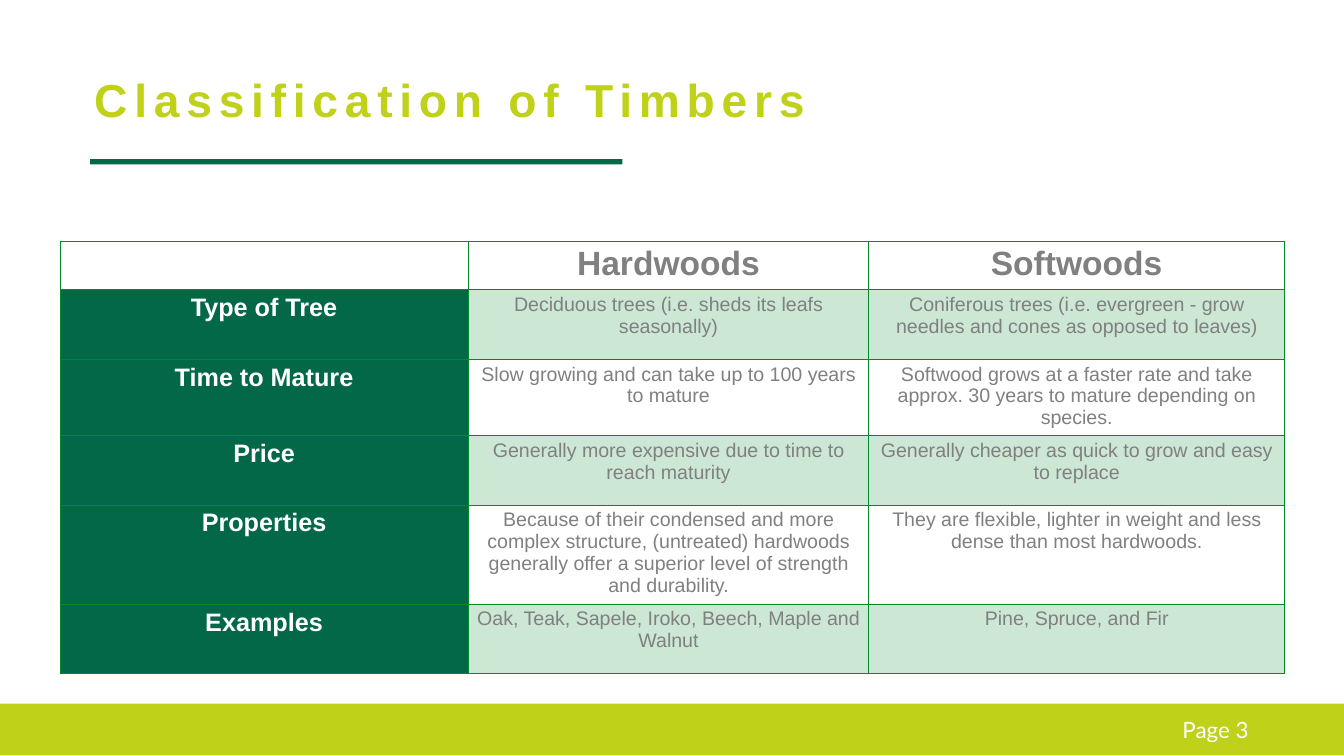
from dataclasses import dataclass

from lxml.etree import SubElement
from pptx import Presentation
from pptx.dml.color import RGBColor as RGB
from pptx.enum.shapes import MSO_SHAPE as Shape
from pptx.enum.text import MSO_ANCHOR as Anchor, PP_ALIGN as Align
from pptx.oxml.ns import qn
from pptx.util import Inches, Pt

TITLE = "Classification of Timbers"
FOOTER = "Page 3"
TIMBERS = [
    ("", "Hardwoods", "Softwoods"),
    ("Type of Tree",
     "Deciduous trees (i.e. sheds its leafs seasonally)",
     "Coniferous trees (i.e. evergreen - grow needles and cones as opposed to leaves)"),
    ("Time to Mature",
     "Slow growing and can take up to 100 years to mature",
     "Softwood grows at a faster rate and take approx. 30 years to mature depending on species."),
    ("Price",
     "Generally more expensive due to time to reach maturity",
     "Generally cheaper as quick to grow and easy to replace"),
    ("Properties",
     "Because of their condensed and more complex structure, (untreated) hardwoods "
     "generally offer a superior level of strength and durability.",
     "They are flexible, lighter in weight and less dense than most hardwoods."),
    ("Examples",
     "Oak, Teak, Sapele, Iroko, Beech, Maple and Walnut",
     "Pine, Spruce, and Fir"),
]

WIDTH, HEIGHT = 26.67, 15
LEFT = 1.79
PADDING = 0.08
COLUMNS = (8.1, 7.95, 8.25)
ROWS = (0.97, 1.38, 1.51, 1.38, 1.97, 1.38)


@dataclass(frozen=True)
class Theme:
    lime: str = "C0D119"
    forest: str = "026848"
    green: str = "00882B"
    grey: str = "808080"
    white: str = "FFFFFF"
    font: str = "Arial"
    footer_font: str = "Lato"
    title_size: int = 66
    header_size: int = 48
    label_size: int = 36
    body_size: int = 28
    footer_size: int = 32
    band_alpha: int = 20000


THEME = Theme()


def style(paragraph, size, color, bold=False, font=THEME.font, align=Align.CENTER):
    """Format a whole paragraph."""
    paragraph.alignment = align
    paragraph.font.size = Pt(size)
    paragraph.font.bold = bold
    paragraph.font.name = font
    paragraph.font.color.rgb = RGB.from_string(color)


def pad(frame):
    """Give a text frame even margins and wrapped text."""
    frame.margin_left = frame.margin_right = Inches(PADDING)
    frame.margin_top = frame.margin_bottom = Inches(PADDING)
    frame.word_wrap = True
    frame.vertical_anchor = Anchor.MIDDLE


def add_bar(slide, color, *box):
    """Add a plain filled rectangle."""
    bar = slide.shapes.add_shape(Shape.RECTANGLE, *map(Inches, box))
    bar.shadow.inherit = False
    bar.fill.solid()
    bar.fill.fore_color.rgb = RGB.from_string(color)
    bar.line.fill.background()
    return bar


def add_borders(cell):
    """Draw a thin green border on every side of a cell."""
    properties = cell._tc.get_or_add_tcPr()
    for position, side in enumerate(("a:lnL", "a:lnR", "a:lnT", "a:lnB")):
        border = properties.makeelement(qn(side), {"w": str(Pt(1))})
        SubElement(SubElement(border, qn("a:solidFill")), qn("a:srgbClr"), val=THEME.green)
        properties.insert(position, border)


def fill_cell(cell, row, column):
    """Fill the label column solid and every other body row with a tint."""
    if row and not column:
        cell.fill.solid()
        cell.fill.fore_color.rgb = RGB.from_string(THEME.forest)
    elif row % 2:
        cell.fill.solid()
        cell.fill.fore_color.rgb = RGB.from_string(THEME.green)
        color = cell._tc.tcPr.find(".//" + qn("a:srgbClr"))
        SubElement(color, qn("a:alpha"), val=str(THEME.band_alpha))
    else:
        cell.fill.background()


def add_title(slide):
    """Place the title and the rule beneath it."""
    title = slide.shapes.title
    title.left, title.top, title.width, title.height = map(Inches, (LEFT, 1.45, 16.63, 1.15))
    pad(title.text_frame)
    heading = title.text_frame.paragraphs[0]
    heading.line_spacing = 0.9
    style(heading, THEME.title_size, THEME.lime, True, align=Align.LEFT)
    letters = heading.add_run()
    letters.text = TITLE
    letters._r.get_or_add_rPr().set("spc", "970")
    add_bar(slide, THEME.forest, LEFT, 3.16, 10.56, 0.1)


def add_timbers(slide):
    """Build the comparison table."""
    box = map(Inches, (1.19, 4.78, sum(COLUMNS), sum(ROWS)))
    table = slide.shapes.add_table(len(ROWS), len(COLUMNS), *box).table
    table.first_row = table.horz_banding = False
    for column, width in zip(table.columns, COLUMNS):
        column.width = Inches(width)
    for r, (entries, height) in enumerate(zip(TIMBERS, ROWS)):
        table.rows[r].height = Inches(height)
        for c, entry in enumerate(entries):
            cell = table.cell(r, c)
            cell.margin_left = cell.margin_right = Inches(PADDING)
            cell.margin_top = cell.margin_bottom = Inches(PADDING)
            cell.text = entry
            if r == 0:
                look = (THEME.header_size, THEME.grey, True)
            elif c == 0:
                look = (THEME.label_size, THEME.white, True)
            else:
                look = (THEME.body_size, THEME.grey)
            style(cell.text_frame.paragraphs[0], *look)
            fill_cell(cell, r, c)
            add_borders(cell)


def add_footer(slide):
    """Add the page band along the bottom."""
    band = add_bar(slide, THEME.lime, 0, 13.96, WIDTH, 1.03)
    pad(band.text_frame)
    band.text_frame.margin_right = Inches(1.89)
    band.text_frame.text = FOOTER
    style(band.text_frame.paragraphs[0], THEME.footer_size, THEME.white,
          font=THEME.footer_font, align=Align.RIGHT)


def main():
    """Build and save the slide."""
    deck = Presentation()
    deck.slide_width, deck.slide_height = Inches(WIDTH), Inches(HEIGHT)
    slide = deck.slides.add_slide(deck.slide_layouts[5])
    add_footer(slide)
    add_title(slide)
    add_timbers(slide)
    deck.save("out.pptx")


if __name__ == "__main__":
    main()
